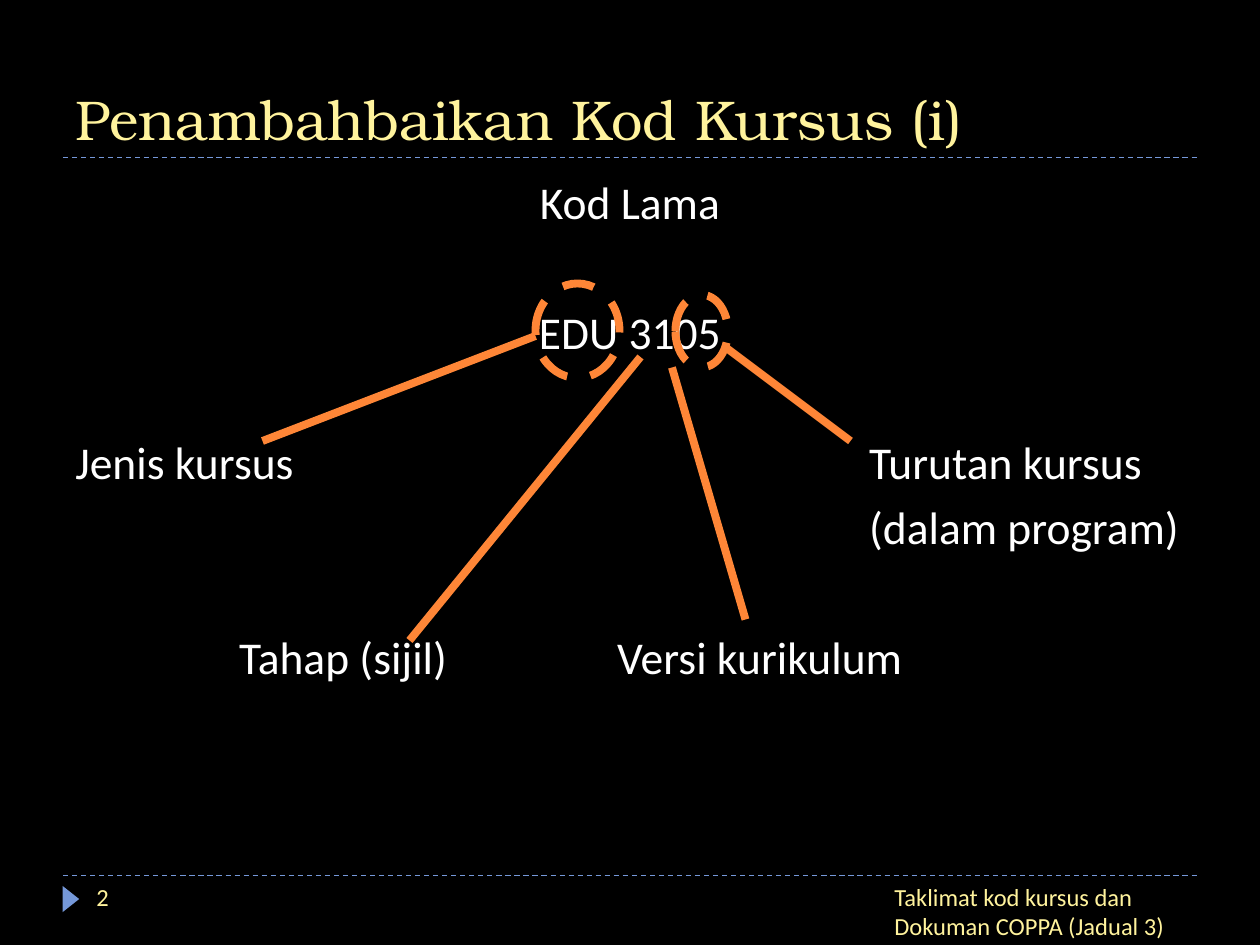
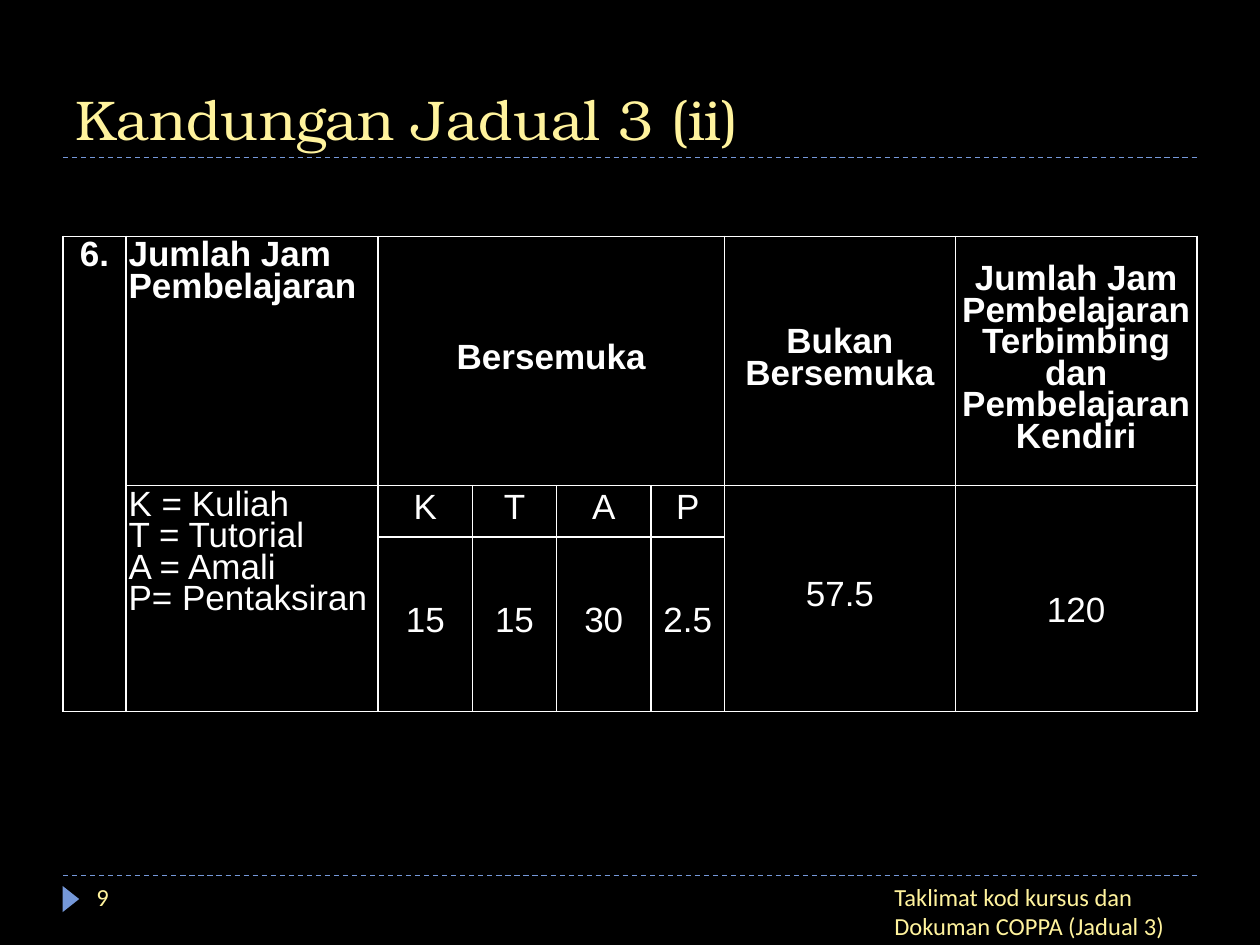
from dataclasses import dataclass
from typing import Any, Sequence

from lxml import etree
from pptx import Presentation
from pptx.dml.color import RGBColor
from pptx.enum.dml import MSO_LINE
from pptx.enum.shapes import MSO_CONNECTOR, MSO_SHAPE
from pptx.enum.text import MSO_ANCHOR, PP_ALIGN
from pptx.oxml.ns import qn
from pptx.util import Pt

BLACK = RGBColor(0x00, 0x00, 0x00)
WHITE = RGBColor(0xFF, 0xFF, 0xFF)
YELLOW = RGBColor(0xFF, 0xF3, 0x9D)
BLUE = RGBColor(0x75, 0x98, 0xD9)
ORANGE = RGBColor(0xFE, 0x86, 0x37)

LEFT, CENTER = PP_ALIGN.LEFT, PP_ALIGN.CENTER
TOP, MIDDLE, BOTTOM = MSO_ANCHOR.TOP, MSO_ANCHOR.MIDDLE, MSO_ANCHOR.BOTTOM
OVAL, TRIANGLE = MSO_SHAPE.OVAL, MSO_SHAPE.ISOSCELES_TRIANGLE
STRAIGHT, DASH = MSO_CONNECTOR.STRAIGHT, MSO_LINE.DASH

SLIDE_W, SLIDE_H = 720, 540
MARGIN, CONTENT_W = 36, 648
TITLE_RULE_Y, FOOTER_Y = 90, 500.4
FOOTER_TEXT = "Taklimat kod kursus dan Dokuman COPPA (Jadual 3)"


@dataclass(frozen=True)
class Style:
    font: str
    size: float
    color: RGBColor
    bold: bool = False


@dataclass(frozen=True)
class Para:
    text: str
    align: Any = LEFT
    before: float = 0


@dataclass(frozen=True)
class Box:
    left: float
    top: float
    width: float
    height: float


@dataclass(frozen=True)
class Line:
    x1: float
    y1: float
    x2: float
    y2: float


@dataclass(frozen=True)
class Entry:
    """A table cell with its place, its extent and its text."""
    row: int
    col: int
    text: str
    rows: int = 1
    cols: int = 1
    align: Any = CENTER
    anchor: Any = MIDDLE
    bold: bool = False
    drop: float = 0


TITLE = Style("TeX Gyre Bonum", 32, YELLOW)
BODY = Style("Calibri", 26, WHITE)
FOOTER = Style("Calibri", 14, YELLOW)

# Code diagram
BODY_BOX = Box(MARGIN, 96, CONTENT_W, 388.8)
NEXT_LINE, SKIP_LINE = 6, 43
TAB_STOPS = (93.6, 309.6, 453.6)
CODE_PARAS = [
    Para("Kod Lama", CENTER),
    Para("EDU 3105", CENTER, SKIP_LINE),
    Para("Jenis kursus\t\tTurutan kursus", LEFT, SKIP_LINE),
    Para("\t\t\t(dalam program)", LEFT, NEXT_LINE),
    Para("\tTahap (sijil)\tVersi kurikulum", LEFT, SKIP_LINE),
]
CODE_RINGS = [Box(306, 162, 48, 54), Box(386, 168.5, 30, 41.5)]
CODE_POINTERS = [
    Line(306, 192, 150, 252),
    Line(366, 204, 234, 366),
    Line(384, 210, 426, 354),
    Line(414, 198, 486, 252),
]

# Learning hours table
HOURS_TOP = 135
COL_WIDTHS = [36, 144, 54, 48, 54, 42, 132, 138]
ROW_HEIGHTS = [142.5, 29.5, 99.5]
LINE_PITCH = 18
CELL_PAD_X, CELL_PAD_Y = 1.5, 3.6
FIRST_HOUR_COL = 2
HOURS = {"K": "15", "T": "15", "A": "30", "P": "2.5"}
ENTRIES = [
    Entry(0, 0, "6.", rows=3, anchor=TOP, bold=True),
    Entry(0, 1, "Jumlah Jam Pembelajaran", align=LEFT, anchor=TOP, bold=True),
    Entry(0, 2, "Bersemuka", cols=4, bold=True),
    Entry(0, 6, "Bukan Bersemuka", bold=True),
    Entry(0, 7, "Jumlah Jam Pembelajaran Terbimbing dan Pembelajaran Kendiri",
          bold=True),
    Entry(1, 1, "K = Kuliah\nT = Tutorial\nA = Amali\nP= Pentaksiran",
          rows=2, align=LEFT, anchor=TOP),
    Entry(1, 6, "57.5", rows=2),
    Entry(1, 7, "120", rows=2, drop=LINE_PITCH),
]
for i, pair in enumerate(HOURS.items()):
    ENTRIES += [Entry(row, FIRST_HOUR_COL + i, text)
                for row, text in enumerate(pair, start=1)]


def set_all(target: Any, values: dict[str, Any]) -> None:
    for name, value in values.items():
        setattr(target, name, value)


def add_run(p: Any, text: str, style: Style) -> None:
    r = p.add_run()
    r.text = text
    set_all(r.font, {"name": style.font, "size": Pt(style.size),
                     "bold": style.bold})
    r.font.color.rgb = style.color


def add_text(s: Any, box: Box, paras: Sequence[Para], style: Style,
             anchor: Any = TOP, tabs: Sequence[float] = ()) -> None:
    sp = s.shapes.add_textbox(Pt(box.left), Pt(box.top),
                              Pt(box.width), Pt(box.height))
    tf = sp.text_frame
    set_all(tf, {"word_wrap": True, "vertical_anchor": anchor})
    for i, para in enumerate(paras):
        p = tf.add_paragraph() if i else tf.paragraphs[0]
        set_all(p, {"alignment": para.align, "space_before": Pt(para.before)})
        if tabs:
            tab_list = etree.SubElement(p._p.get_or_add_pPr(), qn("a:tabLst"))
            for pos in tabs:
                etree.SubElement(tab_list, qn("a:tab"),
                                 pos=str(Pt(pos)), algn="l")
        add_run(p, para.text, style)


def add_line(s: Any, line: Line, color: RGBColor, width: float,
             dash: Any = None) -> None:
    c = s.shapes.add_connector(STRAIGHT, Pt(line.x1), Pt(line.y1),
                               Pt(line.x2), Pt(line.y2))
    c.line.color.rgb = color
    set_all(c.line, {"width": Pt(width), "dash_style": dash})
    etree.SubElement(c._element.spPr, qn("a:effectLst"))


def add_shape(s: Any, kind: Any, box: Box) -> Any:
    sp = s.shapes.add_shape(kind, Pt(box.left), Pt(box.top),
                            Pt(box.width), Pt(box.height))
    sp.shadow.inherit = False
    return sp


def add_ring(s: Any, box: Box) -> None:
    sp = add_shape(s, OVAL, box)
    sp.fill.background()
    sp.line.color.rgb = ORANGE
    set_all(sp.line, {"width": Pt(4.5), "dash_style": DASH})


def add_base_slide(prs: Any, title: str, number: int) -> Any:
    """Add a slide with the background, rules, title and footer."""
    s = prs.slides.add_slide(prs.slide_layouts[6])
    s.background.fill.solid()
    s.background.fill.fore_color.rgb = BLACK
    for y in (FOOTER_Y, TITLE_RULE_Y):
        add_line(s, Line(MARGIN, y, MARGIN + CONTENT_W, y), BLUE, 0.75, DASH)
    marker = add_shape(s, TRIANGLE, Box(33, 509, 15, 9.5))
    marker.rotation = 90
    marker.fill.solid()
    marker.fill.fore_color.rgb = BLUE
    marker.line.fill.background()
    add_text(s, Box(MARGIN, 12, CONTENT_W, 78), [Para(title)], TITLE, BOTTOM)
    add_text(s, Box(504, FOOTER_Y, 180, 28.8), [Para(FOOTER_TEXT)], FOOTER)
    add_text(s, Box(48, FOOTER_Y, 156, 28.8), [Para(str(number))], FOOTER)
    return s


def set_borders(cell: Any, color: RGBColor, width: float) -> None:
    tc_pr = cell._tc.get_or_add_tcPr()
    for i, side in enumerate(("lnL", "lnR", "lnT", "lnB")):
        ln = etree.Element(qn(f"a:{side}"), w=str(Pt(width)))
        fill = etree.SubElement(ln, qn("a:solidFill"))
        etree.SubElement(fill, qn("a:srgbClr"), val=str(color))
        tc_pr.insert(i, ln)


def fill_entry(table: Any, entry: Entry) -> None:
    cell = table.cell(entry.row, entry.col)
    if entry.rows > 1 or entry.cols > 1:
        cell.merge(table.cell(entry.row + entry.rows - 1,
                              entry.col + entry.cols - 1))
    set_all(cell, {"vertical_anchor": entry.anchor,
                   "margin_left": Pt(CELL_PAD_X),
                   "margin_right": Pt(CELL_PAD_X),
                   "margin_top": Pt(CELL_PAD_Y + entry.drop),
                   "margin_bottom": Pt(CELL_PAD_Y)})
    tf = cell.text_frame
    for i, text in enumerate(entry.text.split("\n")):
        p = tf.add_paragraph() if i else tf.paragraphs[0]
        set_all(p, {"alignment": entry.align, "line_spacing": Pt(LINE_PITCH)})
        add_run(p, text, Style("Arial", 20, WHITE, entry.bold))


def add_hours_table(s: Any) -> None:
    table = s.shapes.add_table(
        len(ROW_HEIGHTS), len(COL_WIDTHS), Pt(MARGIN), Pt(HOURS_TOP),
        Pt(sum(COL_WIDTHS)), Pt(sum(ROW_HEIGHTS))).table
    set_all(table, {"first_row": False, "horz_banding": False})
    for col, width in zip(table.columns, COL_WIDTHS):
        col.width = Pt(width)
    for row, height in zip(table.rows, ROW_HEIGHTS):
        row.height = Pt(height)
    for cell in table.iter_cells():
        cell.fill.background()
        set_borders(cell, WHITE, 1)
    for entry in ENTRIES:
        fill_entry(table, entry)


def add_code_slide(prs: Any) -> None:
    s = add_base_slide(prs, "Penambahbaikan Kod Kursus (i)", 2)
    add_text(s, BODY_BOX, CODE_PARAS, BODY, tabs=TAB_STOPS)
    for ring in CODE_RINGS:
        add_ring(s, ring)
    for pointer in CODE_POINTERS:
        add_line(s, pointer, ORANGE, 4.5)


def add_hours_slide(prs: Any) -> None:
    s = add_base_slide(prs, "Kandungan Jadual 3 (ii)", 9)
    add_hours_table(s)


def main() -> None:
    prs = Presentation()
    set_all(prs, {"slide_width": Pt(SLIDE_W), "slide_height": Pt(SLIDE_H)})
    add_code_slide(prs)
    add_hours_slide(prs)
    prs.save("out.pptx")


if __name__ == "__main__":
    main()
